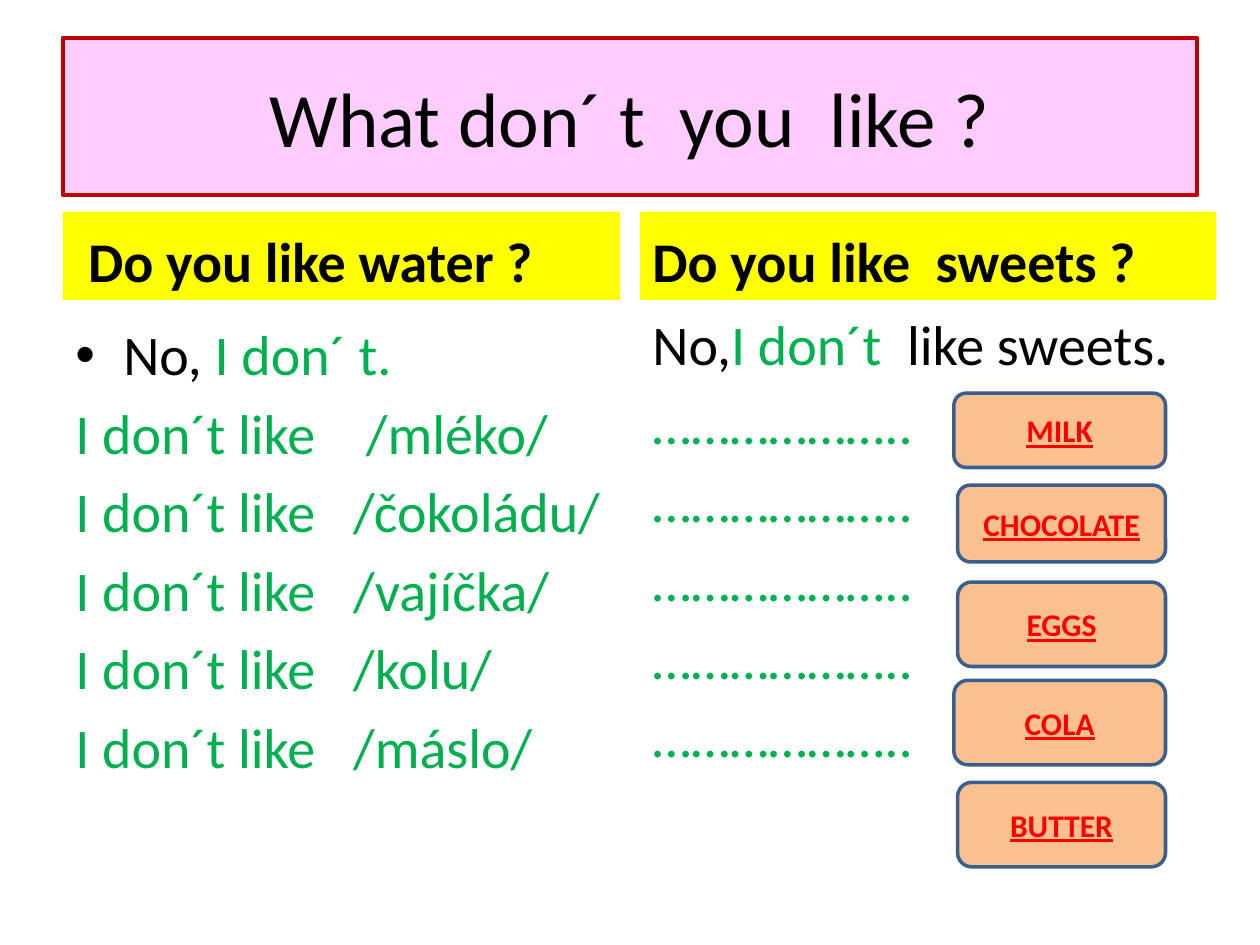
from dataclasses import dataclass

from lxml.etree import SubElement
from pptx import Presentation
from pptx.dml.color import RGBColor
from pptx.enum.shapes import MSO_SHAPE
from pptx.enum.text import MSO_ANCHOR, PP_ALIGN
from pptx.oxml.ns import qn
from pptx.util import Inches, Pt


@dataclass(frozen=True)
class Theme:
    font: str = "Calibri"
    title_size: int = 44
    body_size: int = 32
    label_size: int = 18
    space_before: float = 6.4
    ink: str = "000000"
    answer: str = "00B050"
    label: str = "FF0000"
    title_fill: str = "FFCCFF"
    title_line: str = "C00000"
    heading_fill: str = "FFFF00"
    button_fill: str = "FAC090"
    button_line: str = "3A5F8C"


THEME = Theme()
LEFT_X, RIGHT_X = 0.5, 5.08


def rgb(color):
    return RGBColor.from_string(color)


def style_run(r, size, color, bold=False, underline=False):
    r.font.name = THEME.font
    r.font.size = Pt(size)
    r.font.color.rgb = rgb(color)
    r.font.bold = bold
    r.font.underline = underline


def add_box(s, shape_type, box, text, fill, size, color, line=None, line_width=0,
            align=PP_ALIGN.CENTER, anchor=MSO_ANCHOR.MIDDLE, bold=False, underline=False):
    sp = s.shapes.add_shape(shape_type, *map(Inches, box))
    sp.shadow.inherit = False
    sp.fill.solid()
    sp.fill.fore_color.rgb = rgb(fill)
    if line:
        sp.line.color.rgb = rgb(line)
        sp.line.width = Pt(line_width)
    else:
        sp.line.fill.background()
    tf = sp.text_frame
    tf.word_wrap = True
    tf.vertical_anchor = anchor
    tf.text = text
    p = tf.paragraphs[0]
    p.alignment = align
    style_run(p.runs[0], size, color, bold, underline)


def add_heading(s, left, width, text):
    add_box(s, MSO_SHAPE.RECTANGLE, (left, 1.68, width, 0.7), text, THEME.heading_fill,
            THEME.body_size, THEME.ink, align=PP_ALIGN.LEFT, anchor=MSO_ANCHOR.BOTTOM, bold=True)


def add_button(s, left, top, height, text):
    add_box(s, MSO_SHAPE.FLOWCHART_ALTERNATE_PROCESS, (left, top, 9.25 - left, height), text,
            THEME.button_fill, THEME.label_size, THEME.label, THEME.button_line, 2,
            bold=True, underline=True)


def add_bullet(p):
    pPr = p._p.get_or_add_pPr()
    pPr.set("marL", str(Inches(0.38)))
    pPr.set("indent", str(Inches(-0.38)))
    SubElement(pPr, qn("a:buFont"), typeface="Arial")
    SubElement(pPr, qn("a:buChar"), char="•")


def add_body(s, box, lines):
    tf = s.shapes.add_textbox(*map(Inches, box)).text_frame
    tf.word_wrap = True
    for i, line in enumerate(lines):
        p = tf.add_paragraph() if i else tf.paragraphs[0]
        p.space_before = Pt(THEME.space_before)
        for text, color in line:
            r = p.add_run()
            r.text = text
            style_run(r, THEME.body_size, color)
    return tf


def main():
    prs = Presentation()
    prs.slide_width, prs.slide_height = Inches(10), Inches(7.5)
    s = prs.slides.add_slide(prs.slide_layouts[6])

    add_box(s, MSO_SHAPE.RECTANGLE, (LEFT_X, 0.3, 9, 1.25), "What don´ t  you  like ?",
            THEME.title_fill, THEME.title_size, THEME.ink, THEME.title_line, 2.25)

    foods = ["   /mléko/", "  /čokoládu/", "  /vajíčka/", "  /kolu/", "  /máslo/"]
    answers = [[("No, ", THEME.ink), ("I don´ t.", THEME.answer)]]
    answers += [[(f"I don´t like {food}", THEME.answer)] for food in foods]
    tf = add_body(s, (LEFT_X, 2.49, 4.42, 4.21), answers)
    add_bullet(tf.paragraphs[0])

    blanks = [[("No,", THEME.ink), ("I don´t  ", THEME.answer), ("like sweets.", THEME.ink)]]
    blanks += [[("………………..", THEME.answer)] for _ in foods]
    add_body(s, (RIGHT_X, 2.41, 4.65, 4.29), blanks)

    add_heading(s, LEFT_X, 4.42, " Do you like water ?")
    add_heading(s, RIGHT_X, 4.57, "Do you like  sweets ?")

    for left, top, height, text in [
        (7.57, 3.12, 0.59, "MILK"),
        (7.6, 3.85, 0.61, "CHOCOLATE"),
        (7.6, 4.62, 0.67, "EGGS"),
        (7.57, 5.4, 0.67, "COLA"),
        (7.6, 6.21, 0.67, "BUTTER"),
    ]:
        add_button(s, left, top, height, text)

    prs.save("out.pptx")


if __name__ == "__main__":
    main()
